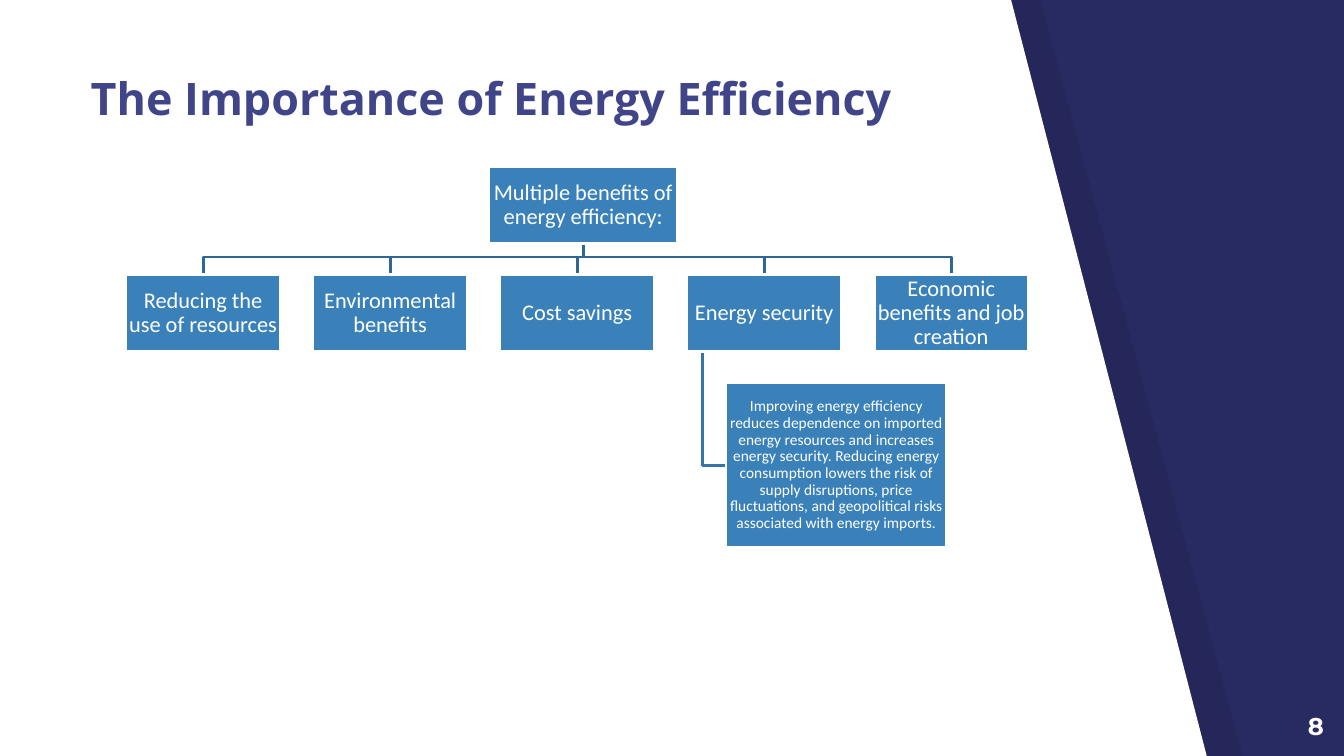
"""Build the slide on the benefits of energy efficiency."""
from dataclasses import dataclass

import lxml.etree
import pptx
import pptx.dml.color
import pptx.enum.shapes
import pptx.enum.text
import pptx.oxml.ns
import pptx.shapes.autoshape
import pptx.slide
import pptx.text.text
import pptx.util

Inches = pptx.util.Inches
Align = pptx.enum.text.PP_ALIGN
Anchor = pptx.enum.text.MSO_ANCHOR
Point = tuple[float, float]

COLORS = {
    "background": "282B62",
    "shade": "000000",
    "white": "FFFFFF",
    "title": "404589",
    "box": "3A81BA",
    "branch_line": "2E6795",
    "detail_line": "3575A9",
}


@dataclass(frozen=True)
class TextStyle:
    font: str
    size: float
    color: str = "white"
    bold: bool = False
    align: Align = Align.LEFT
    anchor: Anchor = Anchor.TOP
    inset: float = 0.13
    line_spacing: float = 1.0


@dataclass(frozen=True)
class Box:
    text: str
    left: float
    top: float
    width: float
    height: float
    style: TextStyle

    @property
    def center(self) -> float:
        return self.left + self.width / 2

    @property
    def middle(self) -> float:
        return self.top + self.height / 2

    @property
    def bottom(self) -> float:
        return self.top + self.height

    @property
    def frame(self) -> tuple[pptx.util.Length, ...]:
        return tuple(Inches(value) for value in (self.left, self.top, self.width, self.height))


TITLE_STYLE = TextStyle("Open Sans", 32, "title", True, anchor=Anchor.BOTTOM)
NUMBER_STYLE = TextStyle("Montserrat", 17.3, bold=True, align=Align.RIGHT)
BOX_STYLE = TextStyle("Calibri", 16, align=Align.CENTER, anchor=Anchor.MIDDLE,
                      inset=0.01, line_spacing=0.9)
DETAIL_STYLE = TextStyle("Calibri", 11, align=Align.CENTER, anchor=Anchor.MIDDLE,
                         inset=0.01, line_spacing=0.9)

TITLE = Box("The Importance of Energy Efficiency", 0.77, 0.05, 9.26, 1.31, TITLE_STYLE)
NUMBER = Box("8", 12.46, 6.93, 0.8, 0.57, NUMBER_STYLE)

BOX_HEIGHT = 0.77
BRANCH_TOP = 2.72
BRANCH_WIDTH = 1.53
FIRST_LEFT, LAST_LEFT = 1.25, 8.67
BUS_TOP = 2.55
STEM_LEFT = 6.97
BRANCH_TEXTS = [
    "Reducing the use of resources",
    "Environmental benefits",
    "Cost savings",
    "Energy security",
    "Economic benefits and job creation",
]
BRANCH_STEP = (LAST_LEFT - FIRST_LEFT) / (len(BRANCH_TEXTS) - 1)

ROOT = Box("Multiple benefits of energy efficiency:", 4.85, 1.65, 1.87, BOX_HEIGHT, BOX_STYLE)
BRANCHES = [
    Box(text, FIRST_LEFT + index * BRANCH_STEP, BRANCH_TOP, BRANCH_WIDTH, BOX_HEIGHT, BOX_STYLE)
    for index, text in enumerate(BRANCH_TEXTS)
]
DETAIL = Box(
    "Improving energy efficiency reduces dependence on imported energy resources and "
    "increases energy security. Reducing energy consumption lowers the risk of supply "
    "disruptions, price fluctuations, and geopolitical risks associated with energy imports.",
    7.2, 3.8, 2.19, 1.63, DETAIL_STYLE,
)

SHADE_OUTLINE = [(0.33, -0.02), (0.33, 7.52), (12.33, 7.52), (10.32, 0)]
PANEL_OUTLINE = [(0, -0.16), (0, 7.62), (12, 7.62), (9.99, -0.15)]


def rgb(name: str) -> pptx.dml.color.RGBColor:
    return pptx.dml.color.RGBColor.from_string(COLORS[name])


def write_text(text_frame: pptx.text.text.TextFrame, text: str, style: TextStyle) -> None:
    text_frame.word_wrap = True
    text_frame.vertical_anchor = style.anchor
    text_frame.margin_left = text_frame.margin_right = Inches(style.inset)
    text_frame.margin_top = text_frame.margin_bottom = Inches(style.inset)
    paragraph = text_frame.paragraphs[0]
    paragraph.alignment = style.align
    paragraph.line_spacing = style.line_spacing
    run = paragraph.add_run()
    run.text = text
    run.font.name = style.font
    run.font.size = pptx.util.Pt(style.size)
    run.font.bold = style.bold
    run.font.color.rgb = rgb(style.color)


def add_label(slide: pptx.slide.Slide, box: Box) -> None:
    write_text(slide.shapes.add_textbox(*box.frame).text_frame, box.text, box.style)


def add_box(slide: pptx.slide.Slide, box: Box) -> None:
    shape = slide.shapes.add_shape(pptx.enum.shapes.MSO_SHAPE.RECTANGLE, *box.frame)
    shape.shadow.inherit = False
    shape.fill.solid()
    shape.fill.fore_color.rgb = rgb("box")
    shape.line.color.rgb = rgb("white")
    shape.line.width = pptx.util.Pt(2)
    write_text(shape.text_frame, box.text, box.style)


def add_outline(slide: pptx.slide.Slide, points: list[Point],
                close: bool) -> pptx.shapes.autoshape.Shape:
    start, *rest = [(Inches(x), Inches(y)) for x, y in points]
    builder = slide.shapes.build_freeform(*start)
    builder.add_line_segments(rest, close=close)
    shape = builder.convert_to_shape()
    shape.shadow.inherit = False
    return shape


def add_panel(slide: pptx.slide.Slide, points: list[Point], color: str,
              opacity: int = 100) -> None:
    shape = add_outline(slide, points, close=True)
    shape.line.fill.background()
    shape.fill.solid()
    shape.fill.fore_color.rgb = rgb(color)
    if opacity < 100:
        color_element = shape.fill._xPr.find(".//" + pptx.oxml.ns.qn("a:srgbClr"))
        alpha = lxml.etree.SubElement(color_element, pptx.oxml.ns.qn("a:alpha"))
        alpha.set("val", str(opacity * 1000))


def add_bent_line(slide: pptx.slide.Slide, points: list[Point], color: str) -> None:
    shape = add_outline(slide, points, close=False)
    shape.fill.background()
    shape.line.color.rgb = rgb(color)
    shape.line.width = pptx.util.Pt(2)


def main() -> None:
    presentation = pptx.Presentation()
    presentation.slide_width = Inches(13.33)
    presentation.slide_height = Inches(7.5)
    slide = presentation.slides.add_slide(presentation.slide_layouts[6])
    slide.background.fill.solid()
    slide.background.fill.fore_color.rgb = rgb("background")

    add_panel(slide, SHADE_OUTLINE, "shade", opacity=7)
    add_panel(slide, PANEL_OUTLINE, "white")
    add_label(slide, TITLE)
    add_label(slide, NUMBER)

    for branch in BRANCHES:
        add_bent_line(slide, [(ROOT.center, ROOT.bottom), (ROOT.center, BUS_TOP),
                              (branch.center, BUS_TOP), (branch.center, branch.top)],
                      "branch_line")
    add_bent_line(slide, [(STEM_LEFT, BRANCHES[3].bottom), (STEM_LEFT, DETAIL.middle),
                          (DETAIL.left, DETAIL.middle)], "detail_line")
    for box in [ROOT, *BRANCHES, DETAIL]:
        add_box(slide, box)

    presentation.save("out.pptx")


if __name__ == "__main__":
    main()
